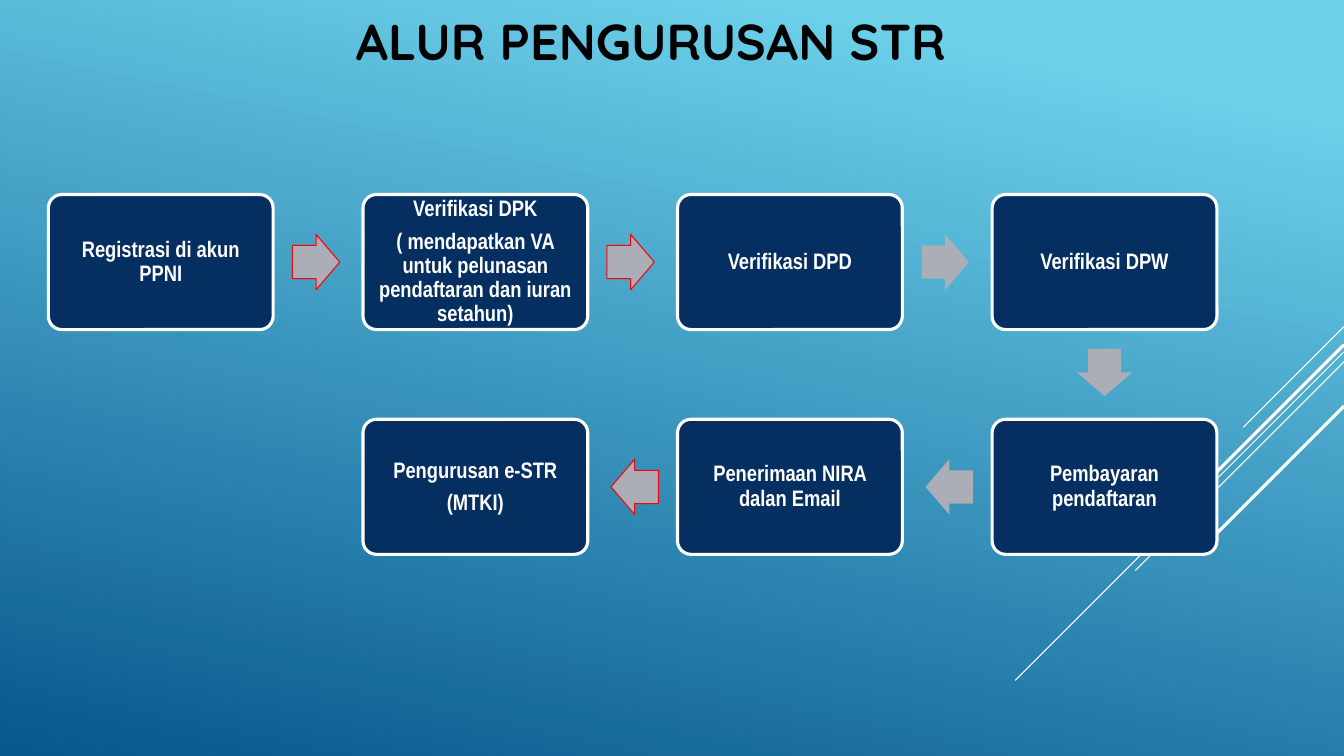
from math import atan2, cos, degrees, radians, sin

from lxml import etree
from pptx import Presentation
from pptx.dml.color import RGBColor
from pptx.enum.shapes import MSO_CONNECTOR, MSO_SHAPE
from pptx.enum.text import MSO_ANCHOR, PP_ALIGN
from pptx.oxml.ns import qn
from pptx.util import Inches, Pt

BOX, ARROW = MSO_SHAPE.ROUNDED_RECTANGLE, MSO_SHAPE.RIGHT_ARROW
LINE = MSO_CONNECTOR.STRAIGHT
MIDDLE, CENTER = MSO_ANCHOR.MIDDLE, PP_ALIGN.CENTER

WHITE = RGBColor(0xFF, 0xFF, 0xFF)
BLACK = RGBColor(0, 0, 0)
NAVY = RGBColor(0x05, 0x2F, 0x61)
GREY = RGBColor(0xAB, 0xAD, 0xB7)
RED = RGBColor(0xFF, 0, 0)
SKY = RGBColor(0x6E, 0xD2, 0xEB)
DEEP = RGBColor(0x06, 0x58, 0x8E)

TITLE = "ALUR PENGURUSAN STR"
# column, row, paragraphs, outline of the arrow to the next step
STEPS = [
    (0, 0, ["Registrasi di akun PPNI"], RED),
    (1, 0, ["Verifikasi DPK",
            "( mendapatkan VA untuk pelunasan pendaftaran dan iuran setahun)"], RED),
    (2, 0, ["Verifikasi DPD"], None),
    (3, 0, ["Verifikasi DPW"], None),
    (3, 1, ["Pembayaran pendaftaran"], None),
    (2, 1, ["Penerimaan NIRA dalan Email"], RED),
    (1, 1, ["Pengurusan e-STR", "(MTKI)"], None),
]
# diagonal rays from the right edge: start height, reach, weight
RAYS = [(3.24, 1.0, 0.75), (3.49, 3.26, 0.75), (3.59, 2.07, 0.75),
        (3.42, 1.91, 2.25), (4.03, 1.39, 2.25)]

WIDE, HIGH = 13.33, 7.5
LEFT, TOP = 0.48, 1.93
COL, ROW = 3.12, 2.23
BOX_W, BOX_H = 2.23, 1.34
TIP_W, TIP_H = 0.47, 0.55
NUDGE = 0.02

TITLE_FONT = {"name": "Quicksand", "size": Pt(36), "bold": True}
STEP_FONT = {"name": "Arial Narrow", "size": Pt(16), "bold": True}
PARA = {"alignment": CENTER, "line_spacing": 0.9, "space_after": Pt(5.6)}
FRAME = {"word_wrap": True, "vertical_anchor": MIDDLE}
INSET = {f"margin_{side}": Inches(0.07) for side in ("left", "top", "right", "bottom")}


def apply(item, values):
    for key, value in values.items():
        setattr(item, key, value)


def write(frame, lines, font, color, para):
    apply(frame, FRAME)
    frame.text = "\n".join(lines)
    for part in frame.paragraphs:
        apply(part, para)
        apply(part.runs[0].font, font)
        part.runs[0].font.color.rgb = color


def stroke(line, color, weight):
    line.color.rgb = color
    line.width = Pt(weight)


def add_centred(kind, mid_x, mid_y, width, height, fill):
    shape = slide.shapes.add_shape(
        kind, Inches(mid_x - width / 2), Inches(mid_y - height / 2),
        Inches(width), Inches(height))
    shape.shadow.inherit = False
    shape.fill.solid()
    shape.fill.fore_color.rgb = fill
    return shape


def center(step):
    return LEFT + step[0] * COL + BOX_W / 2, TOP + step[1] * ROW + BOX_H / 2


def add_step(step):
    box = add_centred(BOX, *center(step), BOX_W, BOX_H, NAVY)
    box.adjustments[0] = 0.1
    stroke(box.line, WHITE, 2.25)
    apply(box.text_frame, INSET)
    write(box.text_frame, step[2], STEP_FONT, WHITE, PARA)


def add_arrow(step, after):
    """Point from one step to the next, just short of halfway."""
    (x1, y1), (x2, y2) = center(step), center(after)
    turn = round(degrees(atan2(y2 - y1, x2 - x1)))
    mid_x = (x1 + x2) / 2 - NUDGE * cos(radians(turn))
    mid_y = (y1 + y2) / 2 - NUDGE * sin(radians(turn))
    arrow = add_centred(ARROW, mid_x, mid_y, TIP_W, TIP_H, GREY)
    arrow.rotation = turn
    arrow.adjustments[0], arrow.adjustments[1] = 0.6, 0.5
    if step[3] is None:
        arrow.line.fill.background()
    else:
        stroke(arrow.line, step[3], 0.75)


def add_ray(start, reach, weight):
    ray = slide.shapes.add_connector(
        LINE, Inches(WIDE), Inches(start), Inches(WIDE - reach), Inches(start + reach))
    stroke(ray.line, WHITE, weight)
    etree.SubElement(ray.element.spPr, qn("a:effectLst"))


deck = Presentation()
deck.slide_width, deck.slide_height = Inches(WIDE), Inches(HIGH)
slide = deck.slides.add_slide(deck.slide_layouts[5])

back = slide.background.fill
back.gradient()
back.gradient_angle = 258
for stop, color, place in zip(back.gradient_stops, (SKY, DEEP), (0.1, 1.0)):
    stop.color.rgb = color
    stop.position = place

title = slide.shapes.title
apply(title, {"left": Inches(1.04), "top": Inches(-0.41),
              "width": Inches(10.83), "height": Inches(1.62)})
write(title.text_frame, [TITLE], TITLE_FONT, BLACK, {"alignment": CENTER})

for ray in RAYS:
    add_ray(*ray)
for step in STEPS:
    add_step(step)
for step, after in zip(STEPS, STEPS[1:]):
    add_arrow(step, after)

deck.save("out.pptx")
